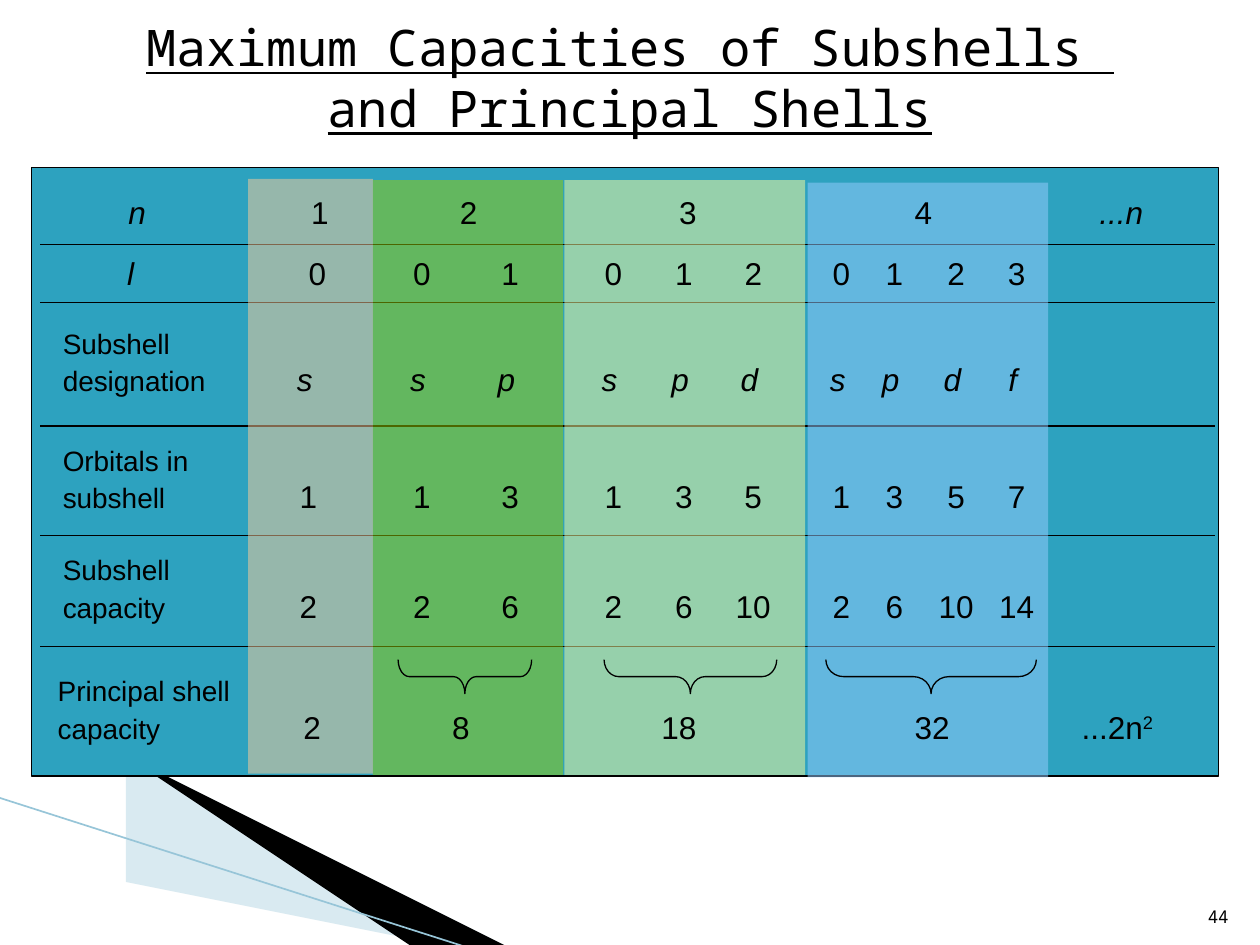
from dataclasses import dataclass
from lxml import etree
from pptx import Presentation
from pptx.dml import color
from pptx.enum import shapes, text
from pptx.oxml import ns
from pptx.util import Inches, Pt


@dataclass(frozen=True)
class Theme:
    ink: str = "000000"
    panel: str = "2DA2BF"
    wedge: str = "A0CBDC"
    edge: str = "97C5D8"
    bands: tuple = ("FFCC99", "99CC00", "FFFF99", "99CCFF")
    sans: str = "Arial"
    mono: str = "Noto Sans Mono"
    title: float = 28.8
    value: int = 18
    label: int = 16
    page: int = 10
    rule: float = 0.75


THEME = Theme()
INSET = 0.1
SUBS = (2.45, 3.35, 4.05, 4.87, 5.43, 5.98, 6.68, 7.1, 7.59, 8.07)


def rgb(code):
    return color.RGBColor.from_string(code)


def paint(shape, code, alpha=None):
    shape.shadow.inherit = False
    shape.fill.solid()
    shape.fill.fore_color.rgb = rgb(code)
    shape.line.fill.background()
    if alpha:
        node = shape.fill._xPr.find(".//" + ns.qn("a:srgbClr"))
        etree.SubElement(node, ns.qn("a:alpha"), val=str(alpha * 1000))


def stroke(line, code=THEME.ink, width=THEME.rule):
    line.color.rgb = rgb(code)
    line.width = Pt(width)


def style(font, name, size):
    font.name = name
    font.size = Pt(size)
    font.color.rgb = rgb(THEME.ink)


def add_rect(slide, box, code, alpha=None):
    rect = slide.shapes.add_shape(shapes.MSO_SHAPE.RECTANGLE, *map(Inches, box))
    paint(rect, code, alpha)
    return rect


def add_wedge(slide, points, code, alpha=None):
    form = slide.shapes.build_freeform(*points[0], scale=Inches(1))
    form.add_line_segments(points[1:])
    paint(form.convert_to_shape(), code, alpha)


def add_line(slide, start, end, code=THEME.ink, width=THEME.rule):
    line = slide.shapes.add_connector(
        shapes.MSO_CONNECTOR.STRAIGHT, *map(Inches, start + end))
    stroke(line.line, code, width)
    etree.SubElement(line._element.spPr, ns.qn("a:effectLst"))


def add_brace(slide, mid, span, bend):
    deep, y = 0.27, 5.37
    brace = slide.shapes.add_shape(
        shapes.MSO_SHAPE.LEFT_BRACE, Inches(mid - deep / 2),
        Inches(y - span / 2), Inches(deep), Inches(span))
    brace.rotation = 270
    brace.adjustments[0] = bend
    brace.shadow.inherit = False
    brace.fill.background()
    stroke(brace.line)


def add_title(slide, words):
    title = slide.shapes.title
    title.left, title.top, title.width, title.height = map(
        Inches, (0.5, 0.17, 9, 0.88))
    frame = title.text_frame
    frame.text = words
    frame.auto_size = text.MSO_AUTO_SIZE.NONE
    frame.vertical_anchor = text.MSO_ANCHOR.MIDDLE
    para = frame.paragraphs[0]
    para.alignment = text.PP_ALIGN.CENTER
    style(para.font, THEME.mono, THEME.title)
    para.font.underline = True


def add_page(slide, number):
    box = slide.shapes.add_textbox(*map(Inches, (9.33, 7.01, 0.52, 0.4)))
    frame = box.text_frame
    frame.word_wrap = True
    frame.vertical_anchor = text.MSO_ANCHOR.BOTTOM
    para = frame.paragraphs[0]
    para.text = number
    para.alignment = text.PP_ALIGN.RIGHT
    style(para.font, THEME.mono, THEME.page)


def add_tabs(para, left, stops):
    tabs = etree.SubElement(para._p.get_or_add_pPr(), ns.qn("a:tabLst"))
    for stop in stops:
        etree.SubElement(tabs, ns.qn("a:tab"), algn="ctr",
                         pos=str(Inches(stop - left - INSET)))


def add_run(para, words, italic=False, size=None):
    run = para.add_run()
    run.text = words
    if italic:
        run.font.italic = True
    if size:
        run.font.size = Pt(size)
    return run


def add_row(slide, left, top, label, values, stops, slant=False):
    *heads, last = label.split("\n")
    high = 0.67 if heads else 0.4
    box = slide.shapes.add_textbox(
        *map(Inches, (left, top, 9.3 - left, high)))
    frame = box.text_frame
    frame.word_wrap = True
    para = frame.paragraphs[0]
    for head in heads:
        para.text = head
        style(para.font, THEME.sans, THEME.label)
        para = frame.add_paragraph()
    add_tabs(para, left, stops)
    style(para.font, THEME.sans, THEME.value)
    add_run(para, last, not heads, THEME.label if heads else None)
    add_run(para, "".join("\t" + value for value in values.split()), slant)
    return para


def add_rows(slide):
    para = add_row(slide, 0.92, 1.48, "n", "1 2 3 4",
                   (2.54, 3.72, 5.46, 7.33, 8.9))
    add_run(para, "\t...n", True)
    add_row(slide, 0.91, 1.97, "l", "0 0 1 0 1 2 0 1 2 3",
            (2.52,) + SUBS[1:])
    add_row(slide, 0.4, 2.54, "Subshell\ndesignation", "s s p s p d s p d f",
            [stop - 0.03 for stop in SUBS], True)
    add_row(slide, 0.4, 3.47, "Orbitals in\nsubshell",
            "1 1 3 1 3 5 1 3 5 7", SUBS)
    add_row(slide, 0.4, 4.34, "Subshell\ncapacity",
            "2 2 6 2 6 10 2 6 10 14", SUBS)
    para = add_row(slide, 0.36, 5.3, "Principal shell\ncapacity",
                   "2 8 18 32 ...2n", (2.48, 3.66, 5.39, 7.4, 8.87))
    power = add_run(para, "2")
    power._r.get_or_add_rPr().set("baseline", "30000")


def main():
    deck = Presentation()
    deck.slide_width, deck.slide_height = Inches(10), Inches(7.5)
    slide = deck.slides.add_slide(deck.slide_layouts[5])
    add_title(slide, "Maximum Capacities of Subshells \vand Principal Shells")
    add_wedge(slide, ((0.55, 6.51), (5.95, 7.51), (4.56, 7.51), (0.55, 6.5)),
              THEME.wedge, 40)
    add_wedge(slide, ((0.53, 6.49), (4.57, 7.51), (3.72, 7.52), (0.54, 6.5)),
              THEME.ink)
    add_line(slide, (-0.01, 6.33), (3.71, 7.52), THEME.edge, 0.95)
    panel = add_rect(slide, (0.25, 1.33, 9.42, 4.83), THEME.panel)
    stroke(panel.line)
    add_page(slide, "44")
    for y in (1.94, 2.4, 3.38, 4.25, 5.13, 6.16):
        add_line(slide, (0.32, y), (9.64, y))
    spans = ((1.97, 1.42, 0.99), (2.96, 1.43, 1.51),
             (4.48, 1.43, 1.91), (6.41, 1.45, 1.91))
    for (x, y, wide), code in zip(spans, THEME.bands):
        add_rect(slide, (x, y, wide, 4.72), code, 50)
    add_rows(slide)
    for brace in ((3.69, 1.06, 0.33), (5.48, 1.37, 0.43), (7.39, 1.67, 0.52)):
        add_brace(slide, *brace)
    deck.save("out.pptx")


if __name__ == "__main__":
    main()
